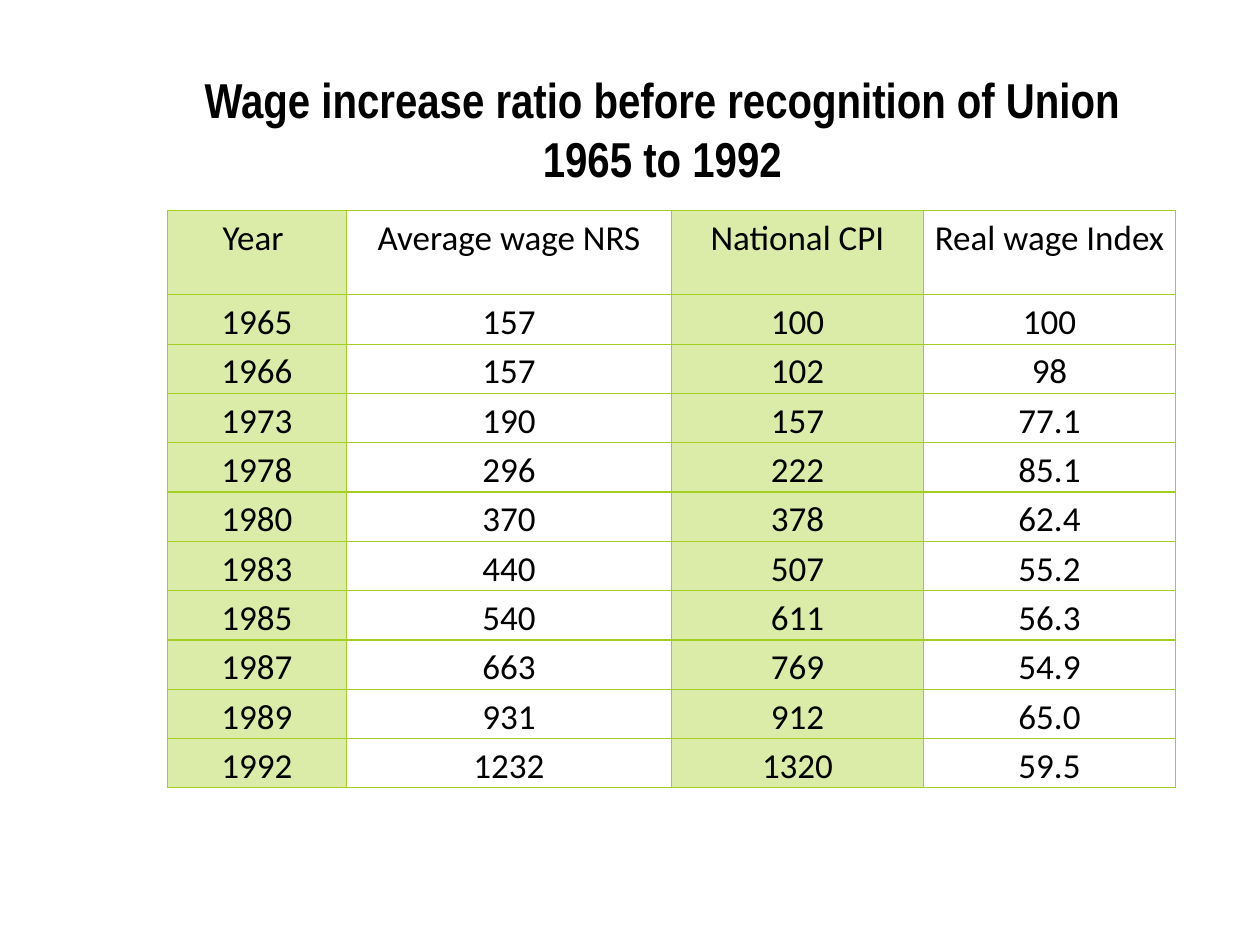
"""Build a slide with a table of wages and prices from 1965 to 1992."""
import pptx
import pptx.dml.color
import pptx.enum.text
import pptx.oxml
import pptx.oxml.ns
import pptx.util
from pptx.util import Inches

COLORS = {"text": "000000", "border": "A3CF23", "band": "A5D028"}
HEADINGS = ["Year ", "Average wage NRS", "National CPI", "Real wage Index"]
WAGES = [
    ("1965", "157", "100", "100"),
    ("1966", "157", "102", "98"),
    ("1973", "190", "157", "77.1"),
    ("1978", "296", "222", "85.1"),
    ("1980", "370", "378", "62.4"),
    ("1983", "440", "507", "55.2"),
    ("1985", "540", "611", "56.3"),
    ("1987", "663", "769", "54.9"),
    ("1989", "931", "912", "65.0"),
    ("1992", "1232", "1320", "59.5"),
]
COLUMN_WIDTHS = [1.42, 2.58, 2, 2]
ROW_HEIGHTS = [0.67] + [0.39] * len(WAGES)


def format_paragraph(paragraph, font_name, size, bold=False):
    paragraph.alignment = pptx.enum.text.PP_ALIGN.CENTER
    paragraph.font.name = font_name
    paragraph.font.size = pptx.util.Pt(size)
    paragraph.font.bold = bold
    paragraph.font.color.rgb = pptx.dml.color.RGBColor.from_string(COLORS["text"])


def style_cell(cell, banded):
    if banded:
        cell.fill.solid()
        cell.fill.fore_color.rgb = pptx.dml.color.RGBColor.from_string(COLORS["band"])
        color = cell._tc.tcPr.find(".//" + pptx.oxml.ns.qn("a:srgbClr"))
        color.append(pptx.oxml.parse_xml(
            f'<a:alpha {pptx.oxml.ns.nsdecls("a")} val="40000"/>'))
    else:
        cell.fill.background()
    for position, side in enumerate(("lnL", "lnR", "lnT", "lnB")):
        cell._tc.tcPr.insert(position, pptx.oxml.parse_xml(
            f'<a:{side} {pptx.oxml.ns.nsdecls("a")} w="{pptx.util.Pt(0.75)}"><a:solidFill>'
            f'<a:srgbClr val="{COLORS["border"]}"/></a:solidFill></a:{side}>'))


presentation = pptx.Presentation()
presentation.slide_width = Inches(10)
presentation.slide_height = Inches(7.5)
slide = presentation.slides.add_slide(presentation.slide_layouts[5])

title = slide.shapes.title
title.left, title.top = Inches(0.67), Inches(0.5)
title.width, title.height = Inches(9.17), Inches(1.21)
heading = title.text_frame
heading.text = "Wage increase ratio before recognition of Union\n1965 to 1992"
heading.word_wrap = True
heading.auto_size = pptx.enum.text.MSO_AUTO_SIZE.NONE
heading.vertical_anchor = pptx.enum.text.MSO_ANCHOR.TOP
heading.margin_left = heading.margin_right = Inches(0.05)
heading.margin_top = heading.margin_bottom = Inches(0.05)
for paragraph in heading.paragraphs:
    format_paragraph(paragraph, "Arial Narrow", 28, bold=True)

wage_table = slide.shapes.add_table(
    len(ROW_HEIGHTS), len(COLUMN_WIDTHS), Inches(1.33), Inches(1.67),
    Inches(sum(COLUMN_WIDTHS)), Inches(sum(ROW_HEIGHTS))).table
wage_table.first_row = False
wage_table.horz_banding = False
for column, width in zip(wage_table.columns, COLUMN_WIDTHS):
    column.width = Inches(width)
for row, height in zip(wage_table.rows, ROW_HEIGHTS):
    row.height = Inches(height)

for row, values in zip(wage_table.rows, [HEADINGS] + WAGES):
    for index, (cell, value) in enumerate(zip(row.cells, values)):
        cell.text = value
        cell.margin_left = cell.margin_right = Inches(0.07)
        cell.margin_top = cell.margin_bottom = 0
        paragraph = cell.text_frame.paragraphs[0]
        paragraph.line_spacing = 1.15
        format_paragraph(paragraph, "Calibri", 20)
        style_cell(cell, banded=index % 2 == 0)

presentation.save("out.pptx")
